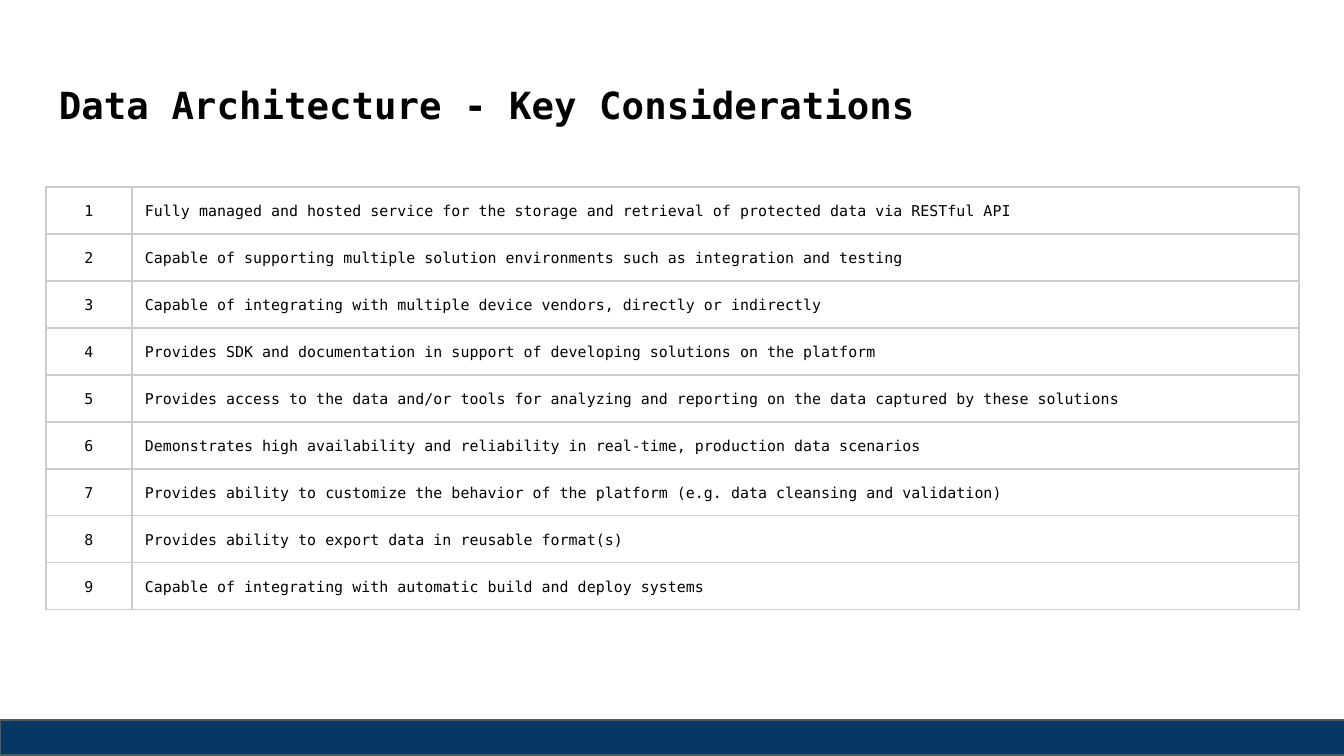
from pptx import Presentation
from pptx.dml.color import RGBColor
from pptx.enum.shapes import MSO_SHAPE as SHAPE
from pptx.enum.text import MSO_ANCHOR as ANCHOR, PP_ALIGN as ALIGN
from pptx.oxml import parse_xml
from pptx.oxml.ns import nsdecls
from pptx.util import Pt

# Content
TITLE = "Data Architecture - Key Considerations"
CONSIDERATIONS = [
    "Fully managed and hosted service for the storage and retrieval of protected data via RESTful API",
    "Capable of supporting multiple solution environments such as integration and testing",
    "Capable of integrating with multiple device vendors, directly or indirectly",
    "Provides SDK and documentation in support of developing solutions on the platform",
    "Provides access to the data and/or tools for analyzing and reporting on the data captured by these solutions",
    "Demonstrates high availability and reliability in real-time, production data scenarios",
    "Provides ability to customize the behavior of the platform (e.g. data cleansing and validation)",
    "Provides ability to export data in reusable format(s)",
    "Capable of integrating with automatic build and deploy systems",
]

# Style and layout, in px
FONT = "DejaVu Sans Mono"
COLORS = {"text": "000000", "cell": "FFFFFF", "border": "CCCCCC",
          "bar": "073763", "bar_line": "595959"}
SLIDE_W, SLIDE_H = 1344, 756
LEFT, TABLE_TOP, ROW_H = 46, 187, 47
COL_WIDTHS = (86, 1167)
INSET, TITLE_INSET = 13, 16


def px(n):
    return round(n * 914400 / 134.4)


def rgb(name):
    return RGBColor.from_string(COLORS[name])


def write(tf, text, size, bold=False, align=ALIGN.LEFT, spacing=1.0):
    p = tf.paragraphs[0]
    p.alignment, p.line_spacing = align, spacing
    r = p.add_run()
    r.text = text
    r.font.name, r.font.size, r.font.bold = FONT, Pt(size), bold
    r.font.color.rgb = rgb("text")


def set_margins(box, top=INSET):
    box.margin_left = box.margin_right = box.margin_bottom = px(INSET)
    box.margin_top = px(top)


def add_borders(cell):
    tc_pr = cell._tc.get_or_add_tcPr()
    for i, side in enumerate(("lnL", "lnR", "lnT", "lnB")):
        tc_pr.insert(i, parse_xml(
            f'<a:{side} {nsdecls("a")} w="{Pt(0.75)}"><a:solidFill>'
            f'<a:srgbClr val="{COLORS["border"]}"/></a:solidFill></a:{side}>'))


prs = Presentation()
prs.slide_width, prs.slide_height = px(SLIDE_W), px(SLIDE_H)
slide = prs.slides.add_slide(prs.slide_layouts[6])

# Footer bar
bar = slide.shapes.add_shape(SHAPE.RECTANGLE, 0, px(720), px(1349), px(35))
bar.shadow.inherit = False
bar.fill.solid()
bar.fill.fore_color.rgb = rgb("bar")
bar.line.color.rgb = rgb("bar_line")
bar.line.width = Pt(0.75)

# Title
tf = slide.shapes.add_textbox(px(LEFT), px(66), px(sum(COL_WIDTHS)), px(85)).text_frame
tf.word_wrap = True
tf.vertical_anchor = ANCHOR.TOP
set_margins(tf, top=TITLE_INSET)
write(tf, TITLE, 20, bold=True)

# Numbered table
rows = len(CONSIDERATIONS)
table = slide.shapes.add_table(rows, len(COL_WIDTHS), px(LEFT), px(TABLE_TOP),
                               px(sum(COL_WIDTHS)), px(ROW_H * rows)).table
table.first_row = table.horz_banding = False
for column, width in zip(table.columns, COL_WIDTHS):
    column.width = px(width)
for i, consideration in enumerate(CONSIDERATIONS):
    table.rows[i].height = px(ROW_H)
    for j, (text, align) in enumerate([(str(i + 1), ALIGN.CENTER),
                                       (consideration, ALIGN.LEFT)]):
        cell = table.cell(i, j)
        cell.fill.solid()
        cell.fill.fore_color.rgb = rgb("cell")
        cell.vertical_anchor = ANCHOR.TOP
        set_margins(cell)
        add_borders(cell)
        write(cell.text_frame, text, 8, align=align, spacing=1.15)

prs.save("out.pptx")
